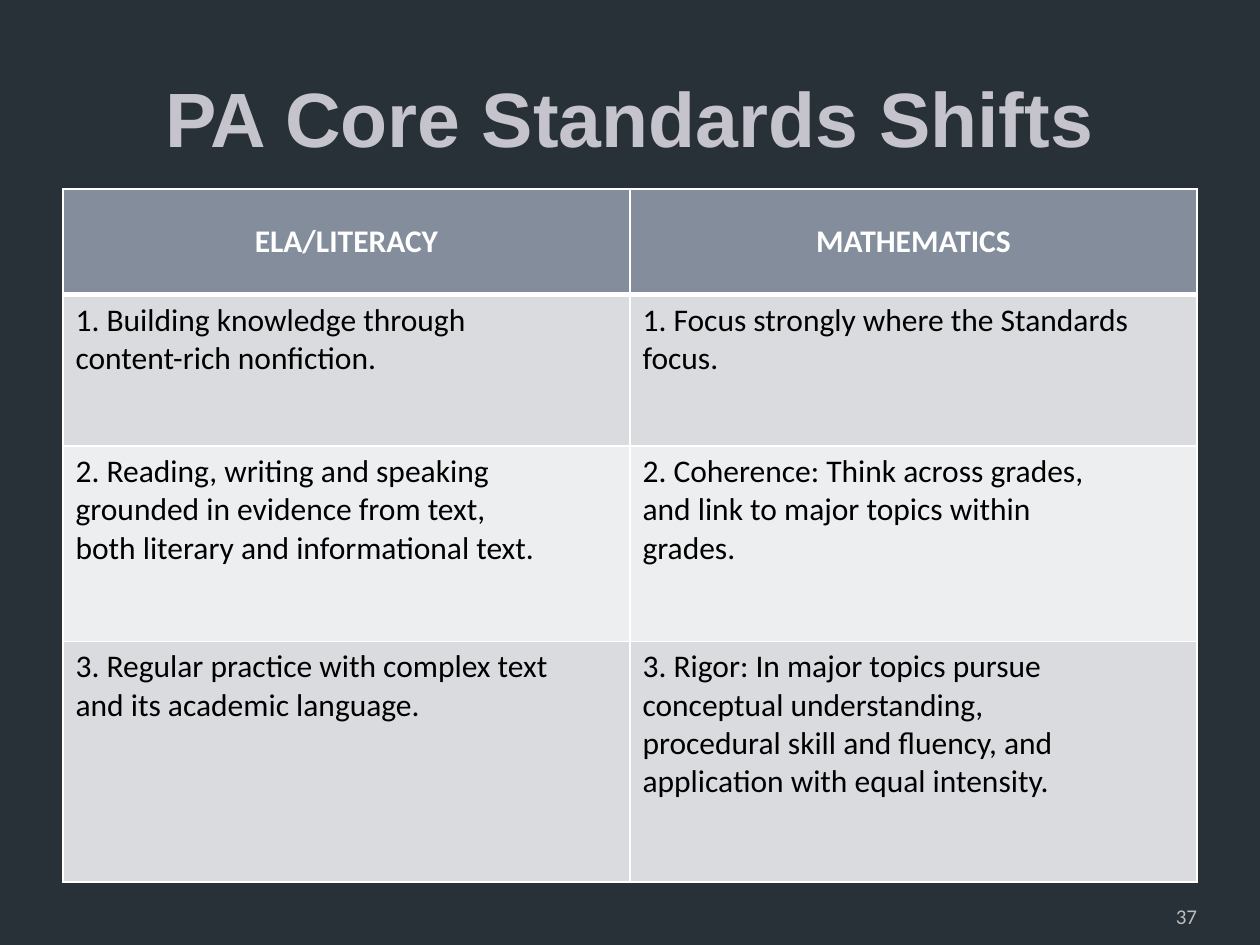
import dataclasses

import lxml.etree
import pptx
import pptx.dml.color
import pptx.enum.text
import pptx.oxml.ns
import pptx.util

ALIGN = pptx.enum.text.PP_ALIGN
ANCHOR = pptx.enum.text.MSO_ANCHOR


@dataclasses.dataclass(frozen=True)
class Theme:
    """Colours, fonts and type sizes of the slide."""
    background: str = "283138"
    title: str = "C5C4CC"
    header: str = "838D9B"
    bands: tuple = ("D9DBDE", "EDEEEF")
    rule: str = "FFFFFF"
    header_text: str = "FFFFFF"
    body_text: str = "000000"
    number: str = "BDBDBD"
    title_font: str = "Arial"
    body_font: str = "Calibri"
    title_size: int = 44
    body_size: int = 18
    number_size: int = 12


THEME = Theme()
WIDTH, HEIGHT = 10, 7.5
MARGIN = 0.05 * WIDTH
CONTENT = WIDTH - 2 * MARGIN
ROW_HEIGHTS = (0.84, 1.2, 1.55, 1.91)
HEADERS = ("ELA/LITERACY", "MATHEMATICS")
SHIFTS = (
    (("1. Building knowledge through", "content-rich nonfiction."),
     ("1. Focus strongly where the Standards", "focus.")),
    (("2. Reading, writing and speaking", "grounded in evidence from text,",
      "both literary and informational text."),
     ("2. Coherence: Think across grades,", "and link to major topics within", "grades.")),
    (("3. Regular practice with complex text", "and its academic language."),
     ("3. Rigor: In major topics pursue", "conceptual understanding,",
      "procedural skill and fluency, and", "application with equal intensity.")),
)


def rgb(value):
    """Turn a hex string into a colour."""
    return pptx.dml.color.RGBColor.from_string(value)


def inches(box):
    """Turn a box in inches into lengths."""
    return [pptx.util.Inches(v) for v in box]


def write(tf, lines, size, color, font, bold=False, align=ALIGN.LEFT):
    """Write one paragraph per line in a text frame."""
    for i, line in enumerate(lines):
        p = tf.paragraphs[0] if i == 0 else tf.add_paragraph()
        p.alignment = align
        r = p.add_run()
        r.text = line
        r.font.size = pptx.util.Pt(size)
        r.font.name = font
        r.font.bold = bold
        r.font.color.rgb = rgb(color)


def add_label(s, box, text, size, color, font, anchor, align, bold=False, side=0.1):
    """Place a single line of text in a box."""
    tf = s.shapes.add_textbox(*inches(box)).text_frame
    tf.word_wrap = True
    tf.vertical_anchor = anchor
    tf.margin_left = tf.margin_right = pptx.util.Inches(side)
    write(tf, [text], size, color, font, bold, align)


def set_borders(cell, widths):
    """Draw the cell borders, given left, right, top and bottom widths in points."""
    tag = pptx.oxml.ns.qn
    tc_pr = cell._tc.get_or_add_tcPr()
    for i, (side, width) in enumerate(zip("LRTB", widths)):
        ln = lxml.etree.Element(tag(f"a:ln{side}"), w=str(int(pptx.util.Pt(width))))
        fill = lxml.etree.SubElement(ln, tag("a:solidFill"))
        lxml.etree.SubElement(fill, tag("a:srgbClr"), val=THEME.rule)
        tc_pr.insert(i, ln)


def add_shifts_table(s, box):
    """Place the table of shifts, with a header row and banded body rows."""
    rows = [[(h,) for h in HEADERS], *SHIFTS]
    table = s.shapes.add_table(len(rows), len(HEADERS), *inches(box)).table
    for column in table.columns:
        column.width = pptx.util.Inches(box[2] / len(HEADERS))
    for i, (row, height) in enumerate(zip(rows, ROW_HEIGHTS)):
        head = i == 0
        table.rows[i].height = pptx.util.Inches(height)
        for j, lines in enumerate(row):
            cell = table.cell(i, j)
            cell.fill.solid()
            cell.fill.fore_color.rgb = rgb(THEME.header if head else THEME.bands[(i - 1) % 2])
            cell.vertical_anchor = ANCHOR.MIDDLE if head else ANCHOR.TOP
            set_borders(cell, (1, 1, 3 if i == 1 else 1, 3 if head else 1))
            write(cell.text_frame, lines, THEME.body_size,
                  THEME.header_text if head else THEME.body_text, THEME.body_font,
                  head, ALIGN.CENTER if head else ALIGN.LEFT)


def add_shifts_slide(prs):
    """Build the slide: title, table and slide number."""
    s = prs.slides.add_slide(prs.slide_layouts[6])
    s.background.fill.solid()
    s.background.fill.fore_color.rgb = rgb(THEME.background)
    add_label(s, (MARGIN, 0.04 * HEIGHT, CONTENT, HEIGHT / 6), "PA Core Standards Shifts",
              THEME.title_size, THEME.title, THEME.title_font, ANCHOR.MIDDLE, ALIGN.CENTER, True)
    add_shifts_table(s, (MARGIN, 0.2 * HEIGHT, CONTENT, sum(ROW_HEIGHTS)))
    number_width = WIDTH / 12
    add_label(s, (WIDTH - MARGIN - number_width, 7.02, number_width, 0.4), "37",
              THEME.number_size, THEME.number, THEME.body_font, ANCHOR.BOTTOM, ALIGN.RIGHT, side=0)


def main():
    """Create the presentation and save it."""
    prs = pptx.Presentation()
    prs.slide_width, prs.slide_height = inches((WIDTH, HEIGHT))
    add_shifts_slide(prs)
    prs.save("out.pptx")


if __name__ == "__main__":
    main()
